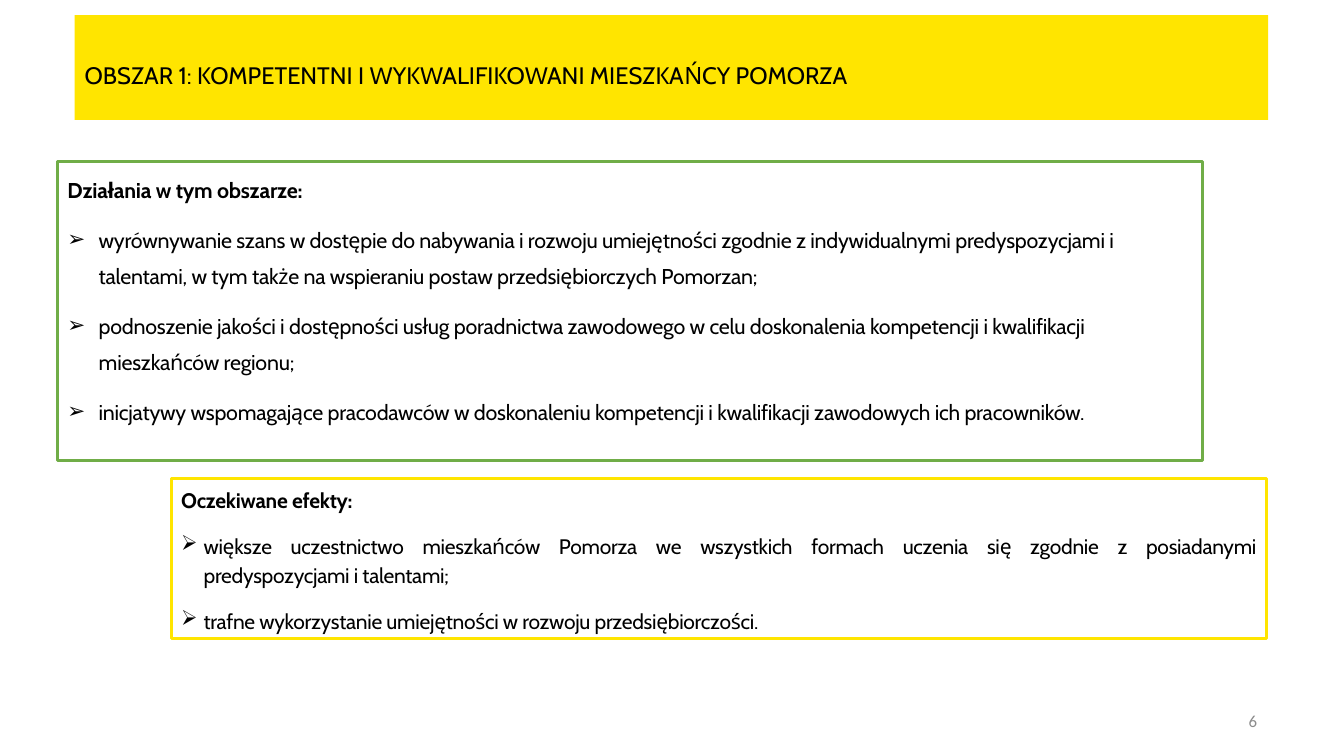
from copy import deepcopy
from dataclasses import dataclass

from lxml import etree
from pptx import Presentation
from pptx.dml.color import RGBColor
from pptx.enum.text import MSO_ANCHOR, MSO_AUTO_SIZE, PP_ALIGN
from pptx.oxml.ns import qn
from pptx.util import Pt

LEFT, RIGHT, JUSTIFY = PP_ALIGN.LEFT, PP_ALIGN.RIGHT, PP_ALIGN.JUSTIFY
TOP, MIDDLE = MSO_ANCHOR.TOP, MSO_ANCHOR.MIDDLE
NO_AUTOFIT = MSO_AUTO_SIZE.NONE

YELLOW, GREEN, WHITE, BLACK, GREY = "FFE500", "70AD47", "FFFFFF", "000000", "8C8C8C"
BORDER_WIDTH = 2.25


@dataclass
class Frame:
    left: float
    top: float
    width: float
    height: float
    fill: str | None = None
    border: str | None = None
    anchor: MSO_ANCHOR = TOP


@dataclass
class TextStyle:
    size: float
    font: str = "Cabin"
    colour: str = BLACK
    align: PP_ALIGN = LEFT
    line_spacing: float = 1.0
    before: float = 0
    after: float = 0
    hanging: float = 0
    tracking: float = 0


TITLE = "OBSZAR 1: KOMPETENTNI I WYKWALIFIKOWANI MIESZKAŃCY POMORZA"
ACTIONS = [
    "Działania w tym obszarze:",
    "wyrównywanie szans w dostępie do nabywania i rozwoju umiejętności zgodnie z "
    "indywidualnymi predyspozycjami i talentami, w tym także na wspieraniu postaw "
    "przedsiębiorczych Pomorzan;",
    "podnoszenie jakości i dostępności usług poradnictwa zawodowego w celu doskonalenia "
    "kompetencji i kwalifikacji mieszkańców regionu;",
    "inicjatywy wspomagające pracodawców w doskonaleniu kompetencji i kwalifikacji "
    "zawodowych ich pracowników.",
]
EFFECTS = [
    "Oczekiwane efekty:",
    "większe uczestnictwo mieszkańców Pomorza we wszystkich formach uczenia się zgodnie z "
    "posiadanymi\vpredyspozycjami i talentami;",
    "trafne wykorzystanie umiejętności w rozwoju przedsiębiorczości.",
]

TITLE_FRAME = Frame(53.3, 10.8, 852.5, 74.9, YELLOW, anchor=MIDDLE)
ACTIONS_FRAME = Frame(41, 115.2, 817.9, 213.8, WHITE, GREEN)
EFFECTS_FRAME = Frame(122.4, 342, 782.6, 113.8, WHITE, YELLOW)
NUMBER_FRAME = Frame(678.2, 500.4, 226.8, 28.8, anchor=MIDDLE)

TITLE_STYLE = TextStyle(17, line_spacing=1.5)
ACTIONS_STYLE = TextStyle(15.3, line_spacing=1.4, before=10, hanging=22.3, tracking=-0.2)
EFFECTS_STYLE = TextStyle(15, align=JUSTIFY, line_spacing=1.15, after=12, hanging=16,
                          tracking=-0.2)
NUMBER_STYLE = TextStyle(12, "Calibri", GREY, RIGHT)


def colour(value: str) -> RGBColor:
    return RGBColor.from_string(value)


def place(shape, frame: Frame) -> None:
    shape.left, shape.top = Pt(frame.left), Pt(frame.top)
    shape.width, shape.height = Pt(frame.width), Pt(frame.height)
    if frame.fill:
        shape.fill.solid()
        shape.fill.fore_color.rgb = colour(frame.fill)
    if frame.border:
        shape.line.color.rgb = colour(frame.border)
        shape.line.width = Pt(BORDER_WIDTH)
    shape.text_frame.word_wrap = True
    shape.text_frame.auto_size = NO_AUTOFIT
    shape.text_frame.vertical_anchor = frame.anchor


def set_bullet(paragraph, hanging: float) -> None:
    """Give the paragraph an arrow bullet, or none when hanging is zero."""
    properties = paragraph._p.get_or_add_pPr()
    properties.set("marL", str(Pt(hanging)))
    properties.set("indent", str(-Pt(hanging)))
    if hanging:
        etree.SubElement(properties, qn("a:buChar")).set("char", "➢")
    else:
        etree.SubElement(properties, qn("a:buNone"))


def format_paragraph(paragraph, style: TextStyle, bold: bool) -> None:
    paragraph.alignment = style.align
    paragraph.line_spacing = style.line_spacing
    paragraph.space_after = Pt(style.after)
    for span in paragraph.runs:
        span.font.name = style.font
        span.font.size = Pt(style.size)
        span.font.bold = bold
        span.font.color.rgb = colour(style.colour)
        span._r.get_or_add_rPr().set("spc", str(round(style.tracking * 100)))
    for line_break in paragraph._p.findall(qn("a:br")):
        line_break.append(deepcopy(paragraph.runs[0]._r.rPr))


def write(shape, lines: list[str], style: TextStyle) -> None:
    """Fill the shape; in a list the first line is a bold heading."""
    shape.text_frame.text = "\n".join(lines)
    for index, paragraph in enumerate(shape.text_frame.paragraphs):
        set_bullet(paragraph, style.hanging if index else 0)
        paragraph.space_before = Pt(style.before if index else 0)
        format_paragraph(paragraph, style, bold=index == 0 and len(lines) > 1)


def add_text_box(page, frame: Frame):
    return page.shapes.add_textbox(
        Pt(frame.left), Pt(frame.top), Pt(frame.width), Pt(frame.height))


def main() -> None:
    deck = Presentation()
    deck.slide_width, deck.slide_height = Pt(960), Pt(540)
    page = deck.slides.add_slide(deck.slide_layouts[1])
    blocks = [
        (page.shapes.title, TITLE_FRAME, [TITLE], TITLE_STYLE),
        (page.placeholders[1], ACTIONS_FRAME, ACTIONS, ACTIONS_STYLE),
        (add_text_box(page, NUMBER_FRAME), NUMBER_FRAME, ["6"], NUMBER_STYLE),
        (add_text_box(page, EFFECTS_FRAME), EFFECTS_FRAME, EFFECTS, EFFECTS_STYLE),
    ]
    for shape, frame, lines, style in blocks:
        place(shape, frame)
        write(shape, lines, style)
    deck.save("out.pptx")


if __name__ == "__main__":
    main()
